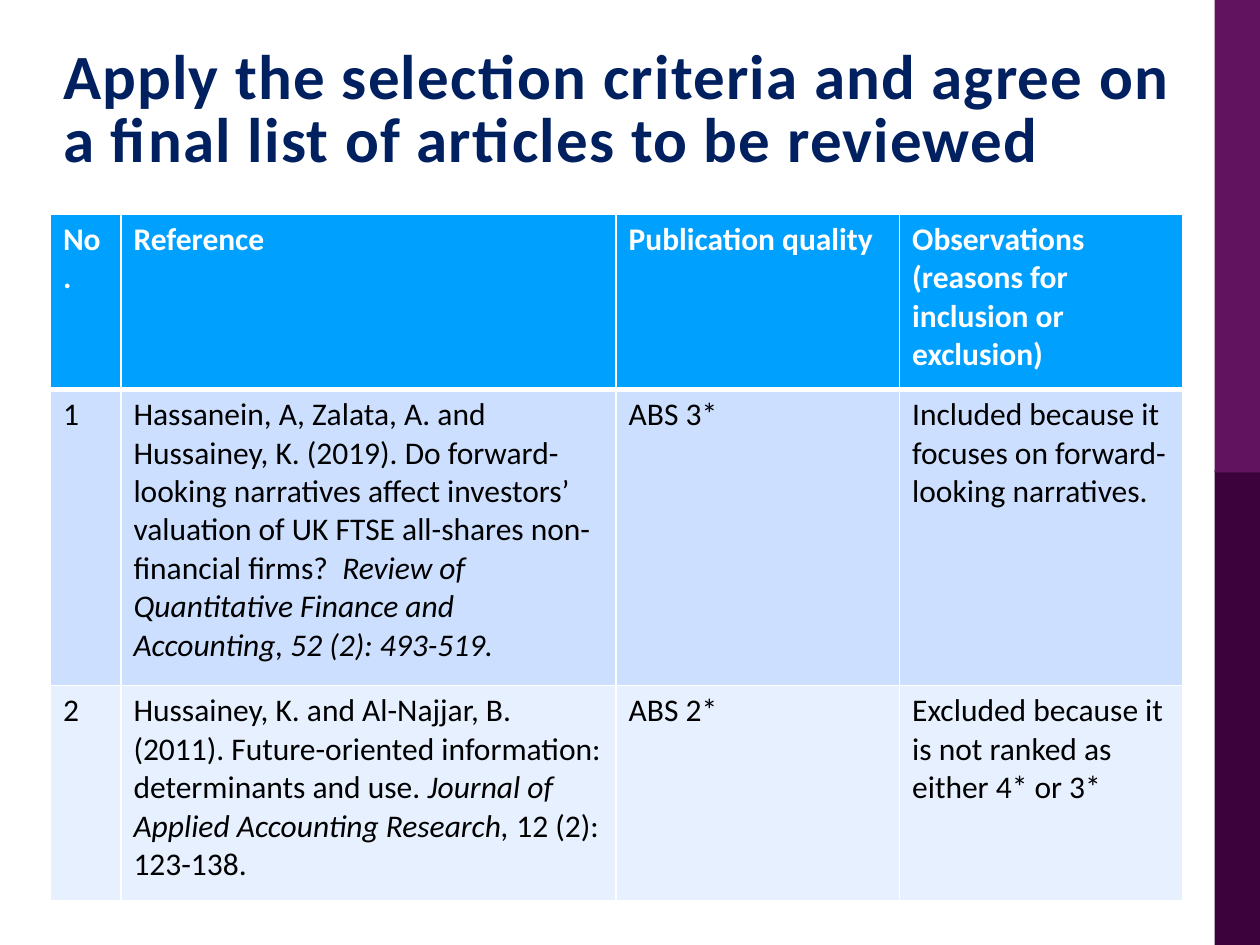
from lxml.etree import SubElement
from pptx import Presentation
from pptx.dml.color import RGBColor
from pptx.enum.shapes import MSO_SHAPE as Shape
from pptx.enum.text import MSO_ANCHOR as Anchor
from pptx.oxml.ns import qn
from pptx.util import Inches, Pt

FONT = "Calibri"
WHITE = "FFFFFF"
HEADER_FILL = "00A0FF"
BAND_FILLS = ["CCDFFF", "E7F0FF"]
COLUMN_WIDTHS = [0.56, 3.93, 2.25, 2.25]
ROW_HEIGHTS = [1.39, 2.35, 1.71]

# A cell is a list of text parts; every second part is italic.
HEADERS = [["No."], ["Reference"], ["Publication quality"],
           ["Observations (reasons for inclusion or exclusion)"]]
ARTICLES = [
    [["1"],
     ["Hassanein, A, Zalata, A. and Hussainey, K. (2019). Do forward-looking "
      "narratives affect investors’ valuation of UK FTSE all-shares "
      "non-financial firms?  ",
      "Review of Quantitative Finance and Accounting, 52 (2): 493-519."],
     ["ABS 3*"],
     ["Included because it focuses on forward-looking narratives."]],
    [["2"],
     ["Hussainey, K. and Al-Najjar, B. (2011). Future-oriented information: "
      "determinants and use. ",
      "Journal of Applied Accounting Research, ",
      "12 (2): 123-138."],
     ["ABS 2*"],
     ["Excluded because it is not ranked as either 4* or 3*"]],
]


def color(hex_code):
    return RGBColor.from_string(hex_code)


def add_text(paragraph, text, size=18, fill="000000", bold=False,
             italic=False, spacing=None):
    run = paragraph.add_run()
    run.text = text
    font = run.font
    font.name, font.size = FONT, Pt(size)
    font.bold, font.italic = bold, italic
    font.color.rgb = color(fill)
    if spacing is not None:
        run._r.get_or_add_rPr().set("spc", str(round(spacing * 100)))


def add_band(slide, left, top, width, height, fill):
    band = slide.shapes.add_shape(Shape.RECTANGLE, Inches(left), Inches(top),
                                  Inches(width), Inches(height))
    band.shadow.inherit = False
    band.fill.solid()
    band.fill.fore_color.rgb = color(fill)
    band.line.fill.background()


def set_title(slide, text):
    title = slide.shapes.title
    title.left, title.top = Inches(0.4), Inches(0.34)
    title.width, title.height = Inches(9.14), Inches(1.24)
    frame = title.text_frame
    frame.word_wrap = True
    frame.vertical_anchor = Anchor.TOP
    paragraph = frame.paragraphs[0]
    paragraph.alignment = 1  # left
    paragraph.line_spacing = Pt(36)
    add_text(paragraph, text, size=36, fill="002060", bold=True, spacing=0.7)


def set_borders(cell, widths):
    properties = cell._tc.get_or_add_tcPr()
    for index, (side, width) in enumerate(widths.items()):
        line = SubElement(properties, qn(f"a:{side}"), w=str(Pt(width)))
        solid = SubElement(line, qn("a:solidFill"))
        SubElement(solid, qn("a:srgbClr"), val=WHITE)
        properties.insert(index, line)  # borders come before the fill


def fill_cell(cell, parts, fill, is_header, below_header):
    cell.fill.solid()
    cell.fill.fore_color.rgb = color(fill)
    paragraph = cell.text_frame.paragraphs[0]
    for index, part in enumerate(parts):
        add_text(paragraph, part, fill=WHITE if is_header else "000000",
                 bold=is_header, italic=index % 2 == 1)
    set_borders(cell, {"lnL": 1, "lnR": 1, "lnT": 3 if below_header else 1,
                       "lnB": 3 if is_header else 1})


def add_article_table(slide):
    rows = [HEADERS] + ARTICLES
    table = slide.shapes.add_table(
        len(rows), len(HEADERS), Inches(0.4), Inches(1.7),
        Inches(sum(COLUMN_WIDTHS)), Inches(sum(ROW_HEIGHTS))).table
    for column, width in zip(table.columns, COLUMN_WIDTHS):
        column.width = Inches(width)
    for row, height in zip(table.rows, ROW_HEIGHTS):
        row.height = Inches(height)
    fills = [HEADER_FILL] + BAND_FILLS
    for r, (row, fill) in enumerate(zip(rows, fills)):
        for c, parts in enumerate(row):
            fill_cell(table.cell(r, c), parts, fill, r == 0, r == 1)


def main():
    deck = Presentation()
    deck.slide_width, deck.slide_height = Inches(10), Inches(7.5)
    slide = deck.slides.add_slide(deck.slide_layouts[5])

    # Side bands
    add_band(slide, 9.64, 3.73, 0.36, 3.77, "3C023C")
    add_band(slide, 9.64, 0, 0.36, 3.75, "621360")

    # Heading and article list
    set_title(slide, "Apply the selection criteria and agree on a final list "
                     "of articles to be reviewed")
    add_article_table(slide)
    deck.save("out.pptx")


if __name__ == "__main__":
    main()
